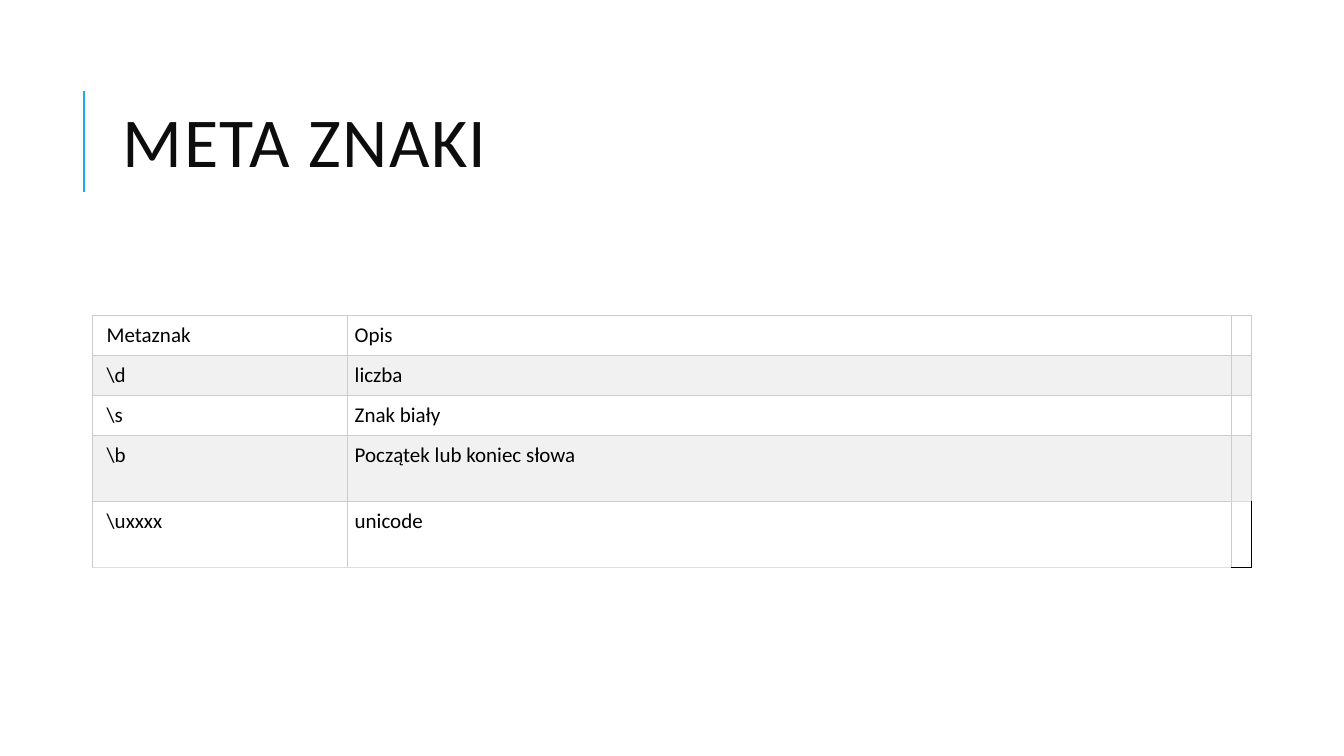
from lxml.etree import SubElement
from pptx import Presentation
from pptx.dml.color import RGBColor
from pptx.enum.shapes import MSO_CONNECTOR as Connector
from pptx.enum.text import MSO_ANCHOR as Anchor, PP_ALIGN as Align
from pptx.oxml import parse_xml
from pptx.oxml.ns import nsdecls, qn
from pptx.util import Pt

FONT = "Calibri"
COLORS = {
    "accent": "1CADE4",
    "title": "0D0D0D",
    "text": "000000",
    "plain": "FFFFFF",
    "band": "F1F1F1",
    "grid": "CCCCCC",
    "soft": "DDDDDD",
    "edge": "000000",
}
ROWS = [
    ("Metaznak", "Opis", ""),
    ("\\d", "liczba", ""),
    ("\\s", "Znak biały", ""),
    ("\\b", "Początek lub koniec słowa", ""),
    ("\\uxxxx", "unicode", ""),
]
COLUMN_WIDTHS = (182.2, 631.4, 14.4)
ROW_HEIGHTS = (28.6, 28.6, 28.6, 47, 47)


def color(name):
    return RGBColor.from_string(COLORS[name])


def format_text(frame, size, color_name):
    para = frame.paragraphs[0]
    para.alignment = Align.LEFT
    for span in para.runs:
        span.font.name = FONT
        span.font.size = Pt(size)
        span.font.color.rgb = color(color_name)
    return para


def add_title(page, text):
    box = page.shapes.title
    box.left, box.top, box.width, box.height = Pt(80.6), Pt(46), Pt(765.4), Pt(118)
    frame = box.text_frame
    frame.text = text
    frame.word_wrap = True
    frame.vertical_anchor = Anchor.MIDDLE
    para = format_text(frame, 50, "title")
    para.line_spacing = 0.8
    para.runs[0].font._element.set("spc", "100")


def add_accent_line(page):
    line = page.shapes.add_connector(Connector.STRAIGHT, Pt(60), Pt(136.8), Pt(60), Pt(64.8))
    line.line.color.rgb = color("accent")
    line.line.width = Pt(1.5)
    SubElement(line._element.spPr, qn("a:effectLst"))


def set_borders(cell, **sides):
    properties = cell._tc.get_or_add_tcPr()
    for index, side in enumerate("LRTB"):
        border = parse_xml(
            f'<a:ln{side} {nsdecls("a")} w="{Pt(0.75)}"><a:solidFill>'
            f'<a:srgbClr val="{COLORS[sides.get(side, "grid")]}"/>'
            f'</a:solidFill></a:ln{side}>'
        )
        properties.insert(index, border)


def fill_cell(cell, text, left_margin, fill_name):
    margin = 5 if text else 0
    cell.margin_left = Pt(left_margin if text else 0)
    cell.margin_right = cell.margin_top = cell.margin_bottom = Pt(margin)
    cell.vertical_anchor = Anchor.TOP
    cell.text = text
    format_text(cell.text_frame, 15, "text")
    if fill_name:
        cell.fill.solid()
        cell.fill.fore_color.rgb = color(fill_name)
    else:
        cell.fill.background()


def add_metacharacter_table(page):
    table = page.shapes.add_table(
        len(ROWS), len(COLUMN_WIDTHS), Pt(66.2), Pt(225.4),
        Pt(sum(COLUMN_WIDTHS)), Pt(sum(ROW_HEIGHTS)),
    ).table
    table.first_row = table.horz_banding = False
    for column, width in zip(table.columns, COLUMN_WIDTHS):
        column.width = Pt(width)
    for row, height in zip(table.rows, ROW_HEIGHTS):
        row.height = Pt(height)

    # The last row has a softer bottom line and an unfilled, dark-edged corner
    last_row, last_column = len(ROWS) - 1, len(COLUMN_WIDTHS) - 1
    special_borders = {
        (last_row - 1, last_column): {"B": "soft"},
        (last_row, last_column): {"T": "soft", "R": "edge", "B": "edge"},
    }
    for column in range(last_column):
        special_borders[last_row, column] = {"B": "soft"}

    for r, texts in enumerate(ROWS):
        for c, text in enumerate(texts):
            cell = table.cell(r, c)
            fill_name = "band" if r % 2 else "plain"
            if (r, c) == (last_row, last_column):
                fill_name = None
            fill_cell(cell, text, 5 if c else 10, fill_name)
            set_borders(cell, **special_borders.get((r, c), {}))


def main():
    deck = Presentation()
    deck.slide_width, deck.slide_height = Pt(960), Pt(540)
    page = deck.slides.add_slide(deck.slide_layouts[5])
    page.background.fill.solid()
    page.background.fill.fore_color.rgb = color("plain")

    # Heading
    add_accent_line(page)
    add_title(page, "META ZNAKI")

    # Table of metacharacters
    add_metacharacter_table(page)

    deck.save("out.pptx")


if __name__ == "__main__":
    main()
